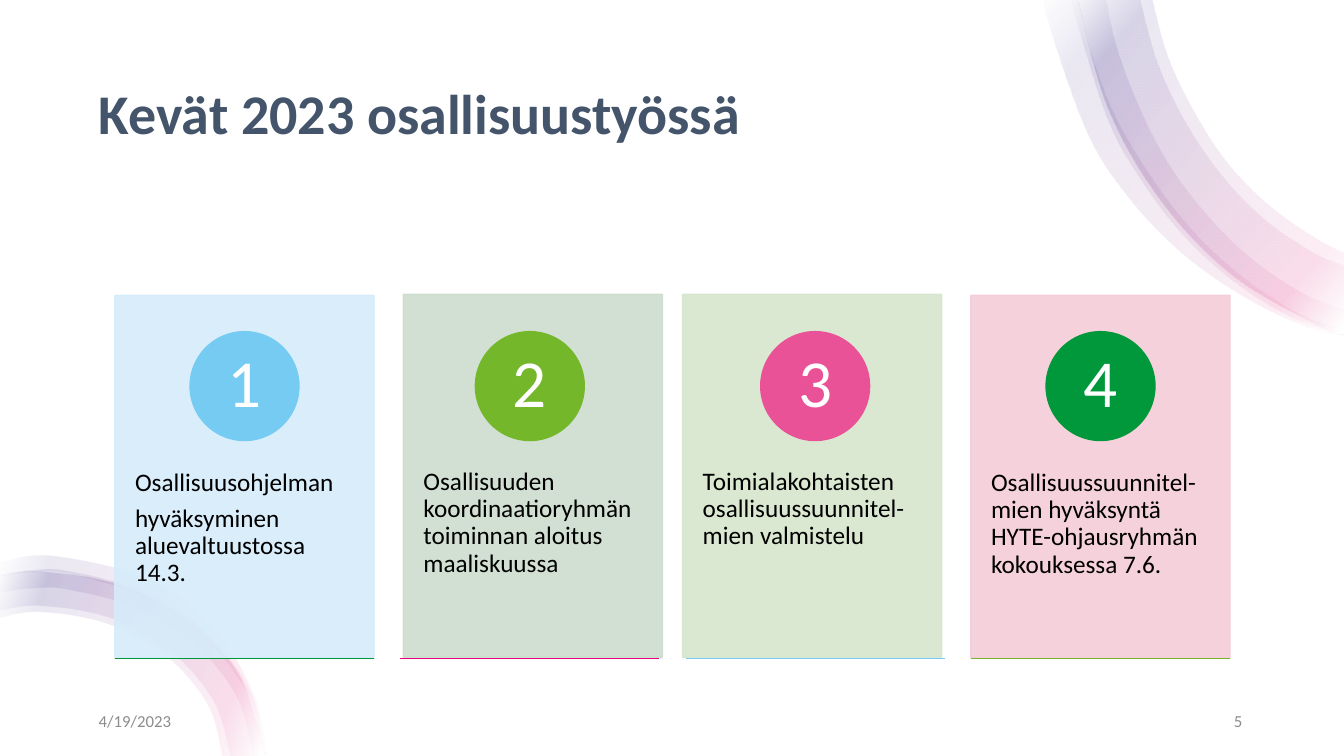
"""Build the spring 2023 participation slide with four numbered cards."""
from dataclasses import dataclass

from lxml.etree import SubElement
from pptx import Presentation
from pptx.dml.color import RGBColor
from pptx.enum.shapes import MSO_CONNECTOR, MSO_SHAPE
from pptx.enum.text import MSO_ANCHOR, PP_ALIGN
from pptx.oxml.ns import qn
from pptx.util import Inches, Pt

TITLE = "Kevät 2023 osallisuustyössä"
DATE, PAGE = "4/19/2023", "5"

CARDS = [
    (["Osallisuusohjelman\u00a0", "hyväksyminen aluevaltuustossa 14.3."],
     "D6ECFA", "76CBF3", "00983A", 0),
    (["Osallisuuden koordinaatioryhmän toiminnan aloitus maaliskuussa"],
     "CCDDCE", "74B72B", "E6007E", 0.03),
    (["Toimialakohtaisten osallisuussuunnitel-mien valmistelu"],
     "D6E6CD", "EA5297", "76CBF3", -0.03),
    (["Osallisuussuunnitel-mien hyväksyntä HYTE-ohjausryhmän kokouksessa 7.6."],
     "F5CCD8", "00983A", "74B72B", 0),
]

RIGHT_RIM = [(10.67, -.09), (10.99, 1.07), (11.52, 2), (12.23, 2.74),
             (13.09, 3.24), (13.33, 3.32)]
LEFT_RIM = [(0, 5.72), (.4, 5.67), (1.17, 5.8), (1.85, 6.16), (2.36, 6.69), (2.63, 7.5)]
RIGHT_BANDS = [
    ([(10.36, -.09), (10.41, .26), (10.78, 1.31), (11.16, 1.92), (11.65, 2.45),
      (12.21, 2.87), (12.82, 3.19), (13.33, 3.35)],
     [(13.33, 3.28), (12.86, 3.1), (12.3, 2.73), (11.81, 2.27), (11.4, 1.73),
      (11.06, 1.15), (10.82, .52), (10.68, -.09)]),
    (RIGHT_RIM,
     [(13.33, 2.51), (13.07, 2.38), (12.61, 2.06), (12.19, 1.64), (11.85, 1.12),
      (11.58, .55), (11.41, -.09)]),
    ([(10.63, -.09), (10.68, .2), (10.99, 1.19), (11.32, 1.79), (11.73, 2.33),
      (12.23, 2.79), (12.79, 3.14), (13.33, 3.33)],
     [(13.33, 3.08), (12.9, 2.9), (12.39, 2.55), (11.95, 2.11), (11.58, 1.61),
      (11.29, 1.04), (11.07, .44), (10.96, -.09)]),
    (RIGHT_RIM,
     [(13.33, 2.64), (13.01, 2.5), (12.53, 2.17), (12.1, 1.72), (11.74, 1.18),
      (11.47, .59), (11.29, -.09)]),
]
LEFT_BANDS = [
    (LEFT_RIM,
     [(2.2, 7.5), (2.06, 7), (1.66, 6.52), (1.07, 6.19), (.4, 6.07), (0, 6.13)]),
    (LEFT_RIM,
     [(2.28, 7.5), (2.12, 6.97), (1.7, 6.47), (1.09, 6.13), (.4, 6.01), (0, 6.06)]),
    ([(0, 5.71), (.31, 5.66), (.69, 5.67), (1.42, 5.87), (2.03, 6.27), (2.47, 6.85),
      (2.63, 7.5)],
     [(2.51, 7.5), (2.34, 6.91), (1.92, 6.39), (1.34, 6.03), (.67, 5.85), (.33, 5.84),
      (0, 5.88)]),
    ([(0, 5.59), (.51, 5.52), (1.48, 5.75), (2.1, 6.23), (2.5, 6.87), (2.64, 7.5)],
     [(2.62, 7.5), (2.45, 6.89), (2, 6.31), (1.39, 5.91), (.69, 5.7), (.32, 5.68),
      (0, 5.72)]),
]


@dataclass(frozen=True)
class Theme:
    font: str = "Calibri"
    title: str = "44546A"
    body: str = "000000"
    footer: str = "8C8C8C"
    white: str = "FFFFFF"
    band: tuple = ((2, "FFFFFF"), (16, "EA5297"), (85, "311F83"), (100, "FFFFFF"))
    band_alpha: int = 10
    card_alpha: int = 90
    title_pt: int = 40
    body_pt: int = 18
    number_pt: int = 48
    footer_pt: int = 12


T = Theme()
WIDTH, HEIGHT = 13.33, 7.5
LEFT, PITCH, CARD_W = 1.14, 2.83, 2.57
CARD_TOP, CARD_H, DISC = 2.93, 3.6, 1.08


def rgb(code):
    return RGBColor.from_string(code)


def box(*lengths):
    return [Inches(v) for v in lengths]


def add_alpha(color, percent):
    SubElement(color, qn("a:alpha"), val=str(percent * 1000))


def curve_controls(points):
    ends = [points[0], *points, points[-1]]
    for a, b, c, d in zip(ends, ends[1:], ends[2:], ends[3:]):
        yield ([q + (r - p) / 6 for p, q, r in zip(a, b, c)],
               [r - (s - q) / 6 for q, r, s in zip(b, c, d)])


def bend_edges(sp, outer, inner):
    left, top = (min(axis) for axis in zip(*outer, *inner))
    lines = list(sp._element.spPr.iter(qn("a:lnTo")))
    controls = [*curve_controls(outer), None, *curve_controls(inner)]
    for line, pair in zip(lines, controls):
        if pair:
            line.tag = qn("a:cubicBezTo")
            for i, (x, y) in enumerate(pair):
                pt = SubElement(line, qn("a:pt"), x=str(Inches(x - left)),
                                y=str(Inches(y - top)))
                line.insert(i, pt)


def add_band(shapes, outer, inner, angle):
    outline = [box(*point) for point in outer + inner]
    builder = shapes.build_freeform(*outline[0])
    builder.add_line_segments(outline[1:], close=True)
    sp = builder.convert_to_shape()
    bend_edges(sp, outer, inner)
    sp.shadow.inherit = False
    sp.line.fill.background()
    sp.fill.gradient()
    sp.fill.gradient_angle = 360 - angle
    stops = sp._element.spPr.find(qn("a:gradFill")).find(qn("a:gsLst"))
    for stop in list(stops):
        stops.remove(stop)
    for position, code in T.band:
        stop = SubElement(stops, qn("a:gs"), pos=str(position * 1000))
        add_alpha(SubElement(stop, qn("a:srgbClr"), val=code), T.band_alpha)


def add_shape(shapes, kind, place, code, alpha=None):
    sp = shapes.add_shape(kind, *box(*place))
    sp.shadow.inherit = False
    for fill in (sp.fill, sp.line.fill):
        fill.solid()
        fill.fore_color.rgb = rgb(code)
    sp.line.width = Pt(1)
    if alpha:
        for color in sp._element.spPr.iter(qn("a:srgbClr")):
            add_alpha(color, alpha)
    return sp


def write(tf, lines, size, code, align=PP_ALIGN.LEFT, spacing=0.9, after=0.35, bold=False):
    tf.word_wrap = True
    for i, line in enumerate(lines):
        p = tf.add_paragraph() if i else tf.paragraphs[0]
        p.alignment, p.line_spacing, p.space_after = align, spacing, Pt(size * after)
        r = p.add_run()
        r.text = line
        r.font.name, r.font.size, r.font.bold = T.font, Pt(size), bold
        r.font.color.rgb = rgb(code)


def add_text(shapes, place, lines, size, code, anchor=MSO_ANCHOR.MIDDLE,
             inset=(0.1, 0.05), **style):
    tf = shapes.add_textbox(*box(*place)).text_frame
    tf.margin_left = tf.margin_right = Inches(inset[0])
    tf.margin_top = tf.margin_bottom = Inches(inset[1])
    tf.vertical_anchor = anchor
    write(tf, lines, size, code, **style)


def add_card(shapes, index, lines, tint, disc, rule, nudge):
    column = LEFT + PITCH * index
    x = column + nudge
    y = CARD_TOP - (0.01 if nudge else 0)
    add_shape(shapes, MSO_SHAPE.RECTANGLE, (x, y, CARD_W, CARD_H), tint, T.card_alpha)
    add_text(shapes, (x, y + 1.37, CARD_W, 2.16), lines, T.body_pt, T.body,
             anchor=MSO_ANCHOR.TOP, inset=(0.2, 0.36))
    disc_x, disc_y = column + (CARD_W - DISC) / 2, CARD_TOP + 0.36
    add_shape(shapes, MSO_SHAPE.OVAL, (disc_x, disc_y, DISC, DISC), disc)
    add_text(shapes, (disc_x + 0.16, disc_y + 0.16, 0.76, 0.76), [str(index + 1)],
             T.number_pt, T.white, inset=(0.08, 0.01), align=PP_ALIGN.CENTER)
    base = CARD_TOP + CARD_H
    add_line = shapes.add_connector
    line = add_line(MSO_CONNECTOR.STRAIGHT, *box(column, base, column + CARD_W, base))
    line.line.color.rgb, line.line.width = rgb(rule), Pt(1)
    SubElement(line._element.spPr, qn("a:effectLst"))


def main():
    prs = Presentation()
    prs.slide_width, prs.slide_height = box(WIDTH, HEIGHT)
    shapes = prs.slides.add_slide(prs.slide_layouts[5]).shapes
    page = add_shape(shapes, MSO_SHAPE.RECTANGLE, (0, 0, WIDTH, HEIGHT), T.white)
    page.line.fill.background()
    title = shapes.title
    title._element.addprevious(page._element)
    title.left, title.top, title.width, title.height = box(0.88, 0.5, 11.57, 1.3)
    title.text_frame.vertical_anchor = MSO_ANCHOR.MIDDLE
    write(title.text_frame, [TITLE], T.title_pt, T.title, after=0, bold=True)
    for bands, angle in ((RIGHT_BANDS, 220), (LEFT_BANDS, 200)):
        for outer, inner in bands:
            add_band(shapes, outer, inner, angle)
    for x, text, align in ((0.88, DATE, PP_ALIGN.LEFT), (9.42, PAGE, PP_ALIGN.RIGHT)):
        add_text(shapes, (x, 6.95, 3, 0.4), [text], T.footer_pt, T.footer,
                 align=align, spacing=1, after=0.5)
    for index, card in enumerate(CARDS):
        add_card(shapes, index, *card)
    prs.save("out.pptx")


if __name__ == "__main__":
    main()
